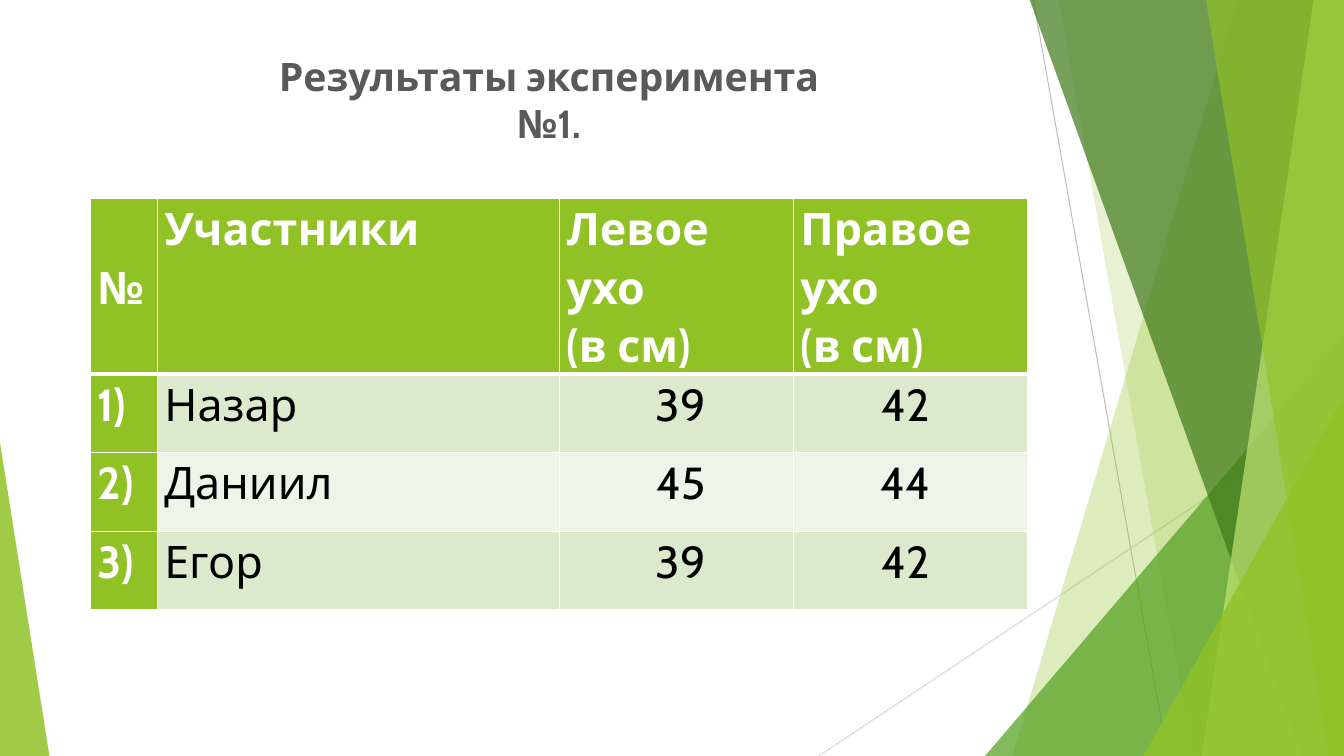
import pptx
import pptx.util
import pptx.dml.color
import pptx.enum.shapes
import pptx.enum.text
import pptx.oxml
import pptx.oxml.ns
import lxml.etree

Inches = pptx.util.Inches
Pt = pptx.util.Pt
SHAPE = pptx.enum.shapes.MSO_SHAPE
ALIGN = pptx.enum.text.PP_ALIGN
ANCHOR = pptx.enum.text.MSO_ANCHOR
FONT = "Cabin"
GREEN, WHITE, BLACK = "90C226", "FFFFFF", "000000"
TOP, BASE, EDGE = -0.01, 7.5, 13.33


def color(code):
    return pptx.dml.color.RGBColor.from_string(code)


def add_tag(parent, name, **attrs):
    tag = lxml.etree.SubElement(parent, pptx.oxml.ns.qn(name))
    for key, value in attrs.items():
        tag.set(key, str(value))
    return tag


def paint(shape, code, alpha):
    """Fill a shape with a see-through colour, alpha in percent."""
    shape.shadow.inherit = False
    shape.line.fill.background()
    shape.fill.solid()
    shape.fill.fore_color.rgb = color(code)
    tint = shape.fill._xPr.find(".//" + pptx.oxml.ns.qn("a:srgbClr"))
    add_tag(tint, "a:alpha", val=alpha * 1000)


def add_line(slide, start, end, code):
    kind = pptx.enum.shapes.MSO_CONNECTOR.STRAIGHT
    line = slide.shapes.add_connector(kind, *map(Inches, start + end))
    line.line.color.rgb = color(code)
    line.line.width = Pt(0.75)
    add_tag(line._element.spPr, "a:effectLst")


def add_band(slide, head, foot, code, alpha):
    """Band from a slanted left side to the right edge of the slide."""
    points = [(head, TOP), (EDGE, TOP), (EDGE, BASE), (foot, BASE)]
    points = [(Inches(x), Inches(y)) for x, y in points]
    form = slide.shapes.build_freeform(*points[0])
    form.add_line_segments(points[1:], close=True)
    paint(form.convert_to_shape(), code, alpha)


def add_peak(slide, left, top, width, tip, code, alpha):
    """Triangle that stands on the bottom edge of the slide."""
    box = map(Inches, (left, top, width, BASE - top))
    peak = slide.shapes.add_shape(SHAPE.ISOSCELES_TRIANGLE, *box)
    peak.adjustments[0] = tip
    paint(peak, code, alpha)


def put_text(frame, text, size=32, code=BLACK, bold=False,
             align=ALIGN.LEFT, space=1.0):
    frame.word_wrap = True
    for i, words in enumerate(text.split("\n")):
        para = frame.add_paragraph() if i else frame.paragraphs[0]
        para.alignment = align
        para.line_spacing = space
        run = para.add_run()
        run.text = words
        run.font.name = FONT
        run.font.size = Pt(size)
        run.font.bold = bold
        run.font.color.rgb = color(code)


def add_edges(cell, **widths):
    props = cell._tc.get_or_add_tcPr()
    for i, (side, width) in enumerate(widths.items()):
        edge = lxml.etree.Element(pptx.oxml.ns.qn("a:ln" + side))
        edge.set("w", str(Pt(width)))
        fill = add_tag(edge, "a:solidFill")
        add_tag(fill, "a:srgbClr", val=WHITE)
        props.insert(i, edge)


def add_grid(slide, rows, left, top, widths, heights):
    box = map(Inches, (left, top, sum(widths), sum(heights)))
    grid = slide.shapes.add_table(len(rows), len(widths), *box).table
    for col, width in zip(grid.columns, widths):
        col.width = Inches(width)
    for row, height in zip(grid.rows, heights):
        row.height = Inches(height)

    for r, row in enumerate(rows):
        for c, text in enumerate(row):
            cell = grid.cell(r, c)
            head = r == 0 or c == 0
            value = r > 0 and c > 1
            # Values lean towards the line between the two ears
            cell.margin_left = Inches(0.16 if value and c == 2 else 0.07)
            cell.margin_right = Inches(0.16 if value and c == 3 else 0.07)
            cell.margin_top = cell.margin_bottom = 0
            if r == c == 0:
                cell.vertical_anchor = ANCHOR.MIDDLE
            cell.fill.solid()
            shade = GREEN if head else "DBE9CD" if r % 2 else "EEF4E8"
            cell.fill.fore_color.rgb = color(shade)
            put_text(cell.text_frame, text, code=WHITE if head else BLACK,
                     bold=head, space=1.07,
                     align=ALIGN.CENTER if value else ALIGN.LEFT)
            add_edges(cell, L=1, R=1, T=3 if r == 1 else 1,
                      B=3 if r == 0 else 1)


def main():
    deck = pptx.Presentation()
    deck.slide_width, deck.slide_height = Inches(EDGE), Inches(BASE)
    slide = deck.slides.add_slide(deck.slide_layouts[6])

    # Thin lines and green facets
    add_line(slide, (10.25, 0), (11.58, BASE), "BFBFBF")
    add_line(slide, (EDGE, 4.03), (8.12, BASE), "D9D9D9")
    add_band(slide, 12.28, 10.04, GREEN, 30)
    add_band(slide, 10.5, 11.83, GREEN, 20)
    add_peak(slide, 9.77, 3.33, 3.56, 1, "54A021", 72)
    add_band(slide, 10.21, 12.91, "3F7819", 70)
    add_band(slide, 13.03, 11.92, "C0E474", 70)
    add_band(slide, 11.96, 13.18, GREEN, 65)
    add_peak(slide, 11.34, 3.93, 1.99, 1, GREEN, 80)
    add_peak(slide, 0, 4.39, 0.49, 0, GREEN, 85)

    # Results
    rows = [
        ("№", "Участники", "Левое ухо\n(в см)", "Правое ухо\n(в см)"),
        ("1)", "Назар", "39", "42"),
        ("2)", "Даниил", "45", "44"),
        ("3)", "Егор", "39", "42"),
    ]
    add_grid(slide, rows, 0.9, 1.97, [0.66, 3.99, 2.32, 2.32],
             [1.74] + [0.78] * 3)

    # Title
    box = slide.shapes.add_textbox(*map(Inches, (2.41, 0.47, 6.07, 0.84)))
    put_text(box.text_frame, "Результаты эксперимента №1.", size=28,
             code="595959", bold=True, align=ALIGN.CENTER)

    deck.save("out.pptx")


if __name__ == "__main__":
    main()
